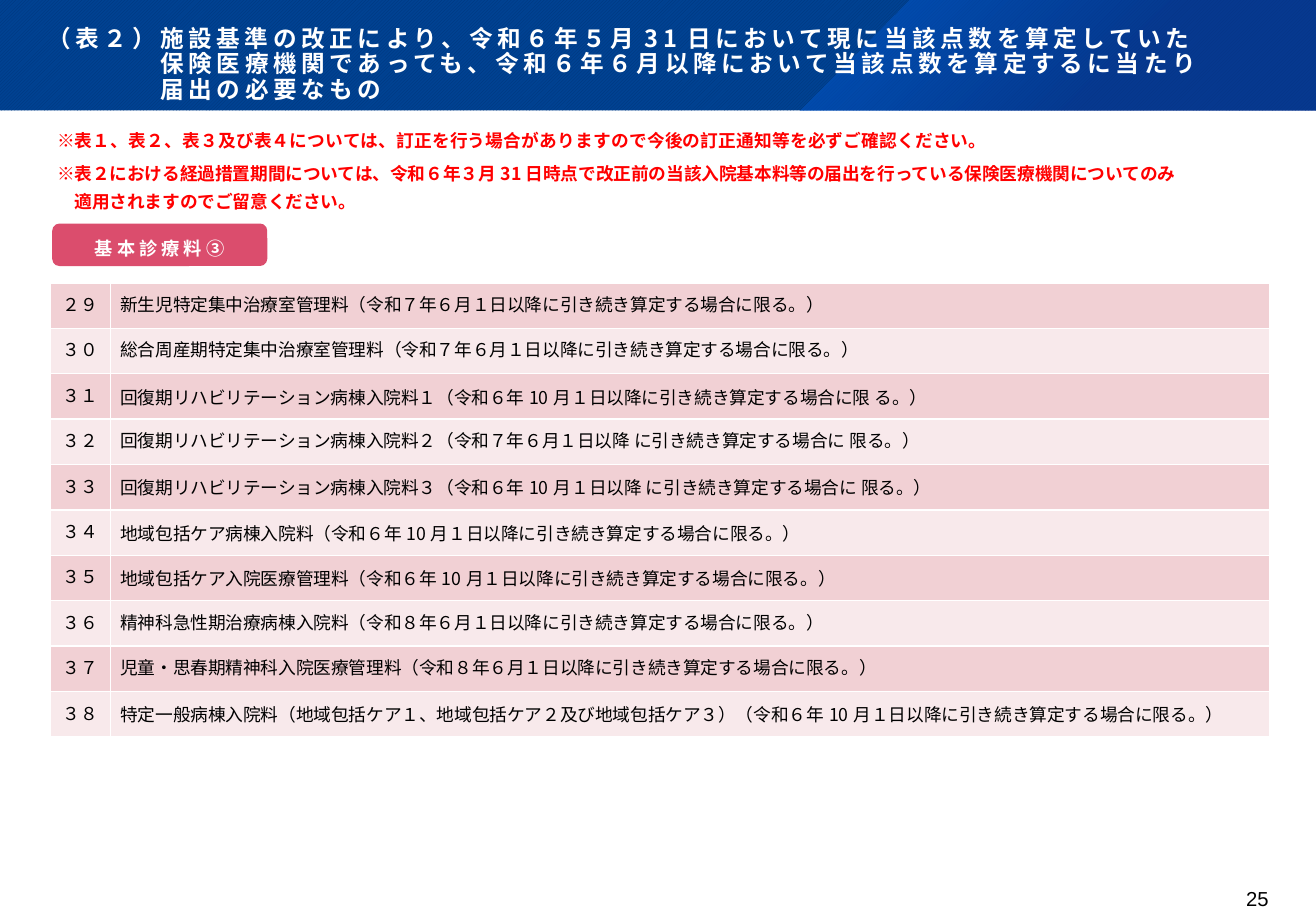
from dataclasses import dataclass
from itertools import groupby

from lxml import etree
from pptx import Presentation
from pptx import util as u
from pptx.dml.color import RGBColor
from pptx.enum import dml, shapes, text
from pptx.oxml import parse_xml
from pptx.oxml.ns import nsdecls, qn


@dataclass(frozen=True)
class Theme:
    body: str = "Karla"
    digits: str = "Noto Sans CJK JP"
    page: str = "Arial"
    white: str = "FFFFFF"
    black: str = "000000"
    red: str = "FF0000"
    pink: str = "DB4D6D"
    bands: tuple = ("F1D0D4", "F8E9EB")
    stripe: str = "003579"
    navy: str = "004292"
    glow: str = "0064DF"
    deep: str = "0C338E"
    title_pt: float = 14
    label_pt: float = 10.8
    text_pt: float = 10.5
    page_pt: float = 12


@dataclass(frozen=True)
class Style:
    size: float
    color: str
    bold: bool = False
    spacing: float = 0
    latin: str = "Noto Sans CJK JP"
    align: text.PP_ALIGN = text.PP_ALIGN.LEFT
    line: float = 1.0
    after: float = 0
    indent: float = 0
    hanging: bool = False


@dataclass(frozen=True)
class TextBlock:
    box: tuple
    insets: tuple
    style: Style
    paragraphs: tuple
    anchor: text.MSO_ANCHOR = text.MSO_ANCHOR.TOP


T = Theme()
TITLE = Style(T.title_pt, T.white, True, 2.7, line=0.9, indent=0.93, hanging=True)
NOTE = Style(T.text_pt, T.red, True, align=text.PP_ALIGN.JUSTIFY, after=4,
             indent=0.15, hanging=True)
LABEL = Style(T.label_pt, T.white, True, 2.4, align=text.PP_ALIGN.CENTER, line=1.3)
NUMBER = Style(T.text_pt, T.black, align=text.PP_ALIGN.CENTER)
ITEM = Style(T.text_pt, T.black)
PAGE = Style(T.page_pt, T.black, latin=T.page, align=text.PP_ALIGN.RIGHT)
NOTE_INSETS = (0.06, 0.03, 0.06, 0.03)

BLOCKS = (
    TextBlock((0, 0, 10.83, 0.99), (0.39, 0.36, 0.36, 0.14), TITLE, (
        "（表２）施設基準の改正により、令和６年５月31日において現に当該点数を算定していた\v"
        "保険医療機関であっても、令和６年６月以降において当該点数を算定するに当たり\v"
        "届出の必要なもの",), text.MSO_ANCHOR.BOTTOM),
    TextBlock((0.41, 1.04, 7.64, 0.24), NOTE_INSETS, NOTE, (
        "※表１、表２、表３及び表４については、訂正を行う場合がありますので"
        "今後の訂正通知等を必ずご確認ください。",)),
    TextBlock((0.41, 1.31, 9.9, 0.47), NOTE_INSETS, NOTE, (
        "※表２における経過措置期間については、令和６年３月31日時点で改正前の"
        "当該入院基本料等の届出を行っている保険医療機関についてのみ",
        "　適用されますのでご留意ください。")),
    TextBlock((9.75, 7.3, 0.69, 0.3), (0, 0, 0, 0), PAGE, ("25",)),
)

FEES = (
    ("２９", "新生児特定集中治療室管理料（令和７年６月１日以降に引き続き算定する場合に限る。）"),
    ("３０", "総合周産期特定集中治療室管理料（令和７年６月１日以降に引き続き算定する場合に限る。）"),
    ("３１", "回復期リハビリテーション病棟入院料１（令和６年10月１日以降に引き続き算定する場合に限 る。）"),
    ("３２", "回復期リハビリテーション病棟入院料２（令和７年６月１日以降 に引き続き算定する場合に 限る。）"),
    ("３３", "回復期リハビリテーション病棟入院料３（令和６年10月１日以降 に引き続き算定する場合に 限る。）"),
    ("３４", "地域包括ケア病棟入院料（令和６年10月１日以降に引き続き算定する場合に限る。）"),
    ("３５", "地域包括ケア入院医療管理料（令和６年10月１日以降に引き続き算定する場合に限る。）"),
    ("３６", "精神科急性期治療病棟入院料（令和８年６月１日以降に引き続き算定する場合に限る。）"),
    ("３７", "児童・思春期精神科入院医療管理料（令和８年６月１日以降に引き続き算定する場合に限る。）"),
    ("３８", "特定一般病棟入院料（地域包括ケア１、地域包括ケア２及び地域包括ケア３）"
             "（令和６年10月１日以降に引き続き算定する場合に限る。）"),
)


def rgb(color: str) -> RGBColor:
    return RGBColor.from_string(color)


def inches(values: tuple) -> list:
    return [u.Inches(v) for v in values]


def char_kind(ch: str) -> str:
    if ch == "\v":
        return "break"
    return "digit" if ch in "0123456789" else "body"


def write(p, content: str, style: Style) -> None:
    """Fill a paragraph, giving ASCII digits the style's Latin font."""
    p.alignment, p.line_spacing = style.align, style.line
    p.space_after = u.Pt(style.after)
    f = p.font
    f.size, f.bold, f.color.rgb = u.Pt(style.size), style.bold, rgb(style.color)
    if style.hanging and not content.startswith("　"):
        pPr = p._p.get_or_add_pPr()
        pPr.set("marL", str(u.Inches(style.indent)))
        pPr.set("indent", str(-u.Inches(style.indent)))
    for kind, chars in groupby(content, char_kind):
        if kind == "break":
            p.add_line_break()
            continue
        r = p.add_run()
        r.text = "".join(chars)
        r.font.name = style.latin if kind == "digit" else T.body
        rPr = r._r.get_or_add_rPr()
        rPr.set("spc", str(round(style.spacing * 100)))
        etree.SubElement(rPr, qn("a:ea")).set("typeface", r.font.name)


def add_block(s, block: TextBlock) -> None:
    tf = s.shapes.add_textbox(*inches(block.box)).text_frame
    tf.word_wrap, tf.vertical_anchor = True, block.anchor
    tf.margin_left, tf.margin_top, tf.margin_right, tf.margin_bottom = inches(block.insets)
    for i, content in enumerate(block.paragraphs):
        write(tf.add_paragraph() if i else tf.paragraphs[0], content, block.style)


def add_header(s) -> None:
    sp = s.shapes.add_shape(shapes.MSO_SHAPE.RECTANGLE, *inches((0, 0, 10.83, 0.91)))
    sp.shadow.inherit = False
    sp.line.fill.background()
    sp.fill.patterned()
    sp.fill.pattern = dml.MSO_PATTERN.DARK_UPWARD_DIAGONAL
    sp.fill.fore_color.rgb, sp.fill.back_color.rgb = rgb(T.stripe), rgb(T.navy)

    # Slanted translucent glow
    fb = s.shapes.build_freeform(u.Inches(7.49), u.Inches(0), scale=1.0)
    fb.add_line_segments([inches(pt) for pt in ((10.83, 0), (10.83, 0.91), (6.58, 0.91))])
    sp = fb.convert_to_shape()
    sp.shadow.inherit = False
    sp.line.fill.background()
    stops = "".join(
        f'<a:gs pos="{pos}000"><a:srgbClr val="{color}"><a:alpha val="{alpha}000"/>'
        f'</a:srgbClr></a:gs>'
        for pos, color, alpha in ((0, T.glow, 50), (62, T.deep, 55)))
    sp._element.spPr.find(qn("a:custGeom")).addnext(parse_xml(
        f'<a:gradFill {nsdecls("a")}><a:gsLst>{stops}</a:gsLst><a:path path="circle">'
        '<a:fillToRect r="100000" b="100000"/></a:path></a:gradFill>'))


def add_label(s) -> None:
    sp = s.shapes.add_shape(shapes.MSO_SHAPE.ROUNDED_RECTANGLE,
                            *inches((0.43, 1.84, 1.77, 0.35)))
    sp.adjustments[0] = 0.17
    sp.shadow.inherit = False
    sp.fill.solid()
    sp.fill.fore_color.rgb = rgb(T.pink)
    sp.line.fill.background()
    sp.text_frame.vertical_anchor = text.MSO_ANCHOR.MIDDLE
    write(sp.text_frame.paragraphs[0], "基本診療料③", LABEL)


def add_fee_table(s) -> None:
    table = s.shapes.add_table(len(FEES), 2, *inches((0.41, 2.33, 10.04, 3.74))).table
    table.columns[0].width, table.columns[1].width = inches((0.5, 9.54))
    for i, fee in enumerate(FEES):
        for cell, content, style in zip(table.rows[i].cells, fee, (NUMBER, ITEM)):
            cell.margin_left = cell.margin_right = u.Inches(0.08)
            cell.margin_top = cell.margin_bottom = 0
            cell.vertical_anchor = text.MSO_ANCHOR.MIDDLE
            write(cell.text_frame.paragraphs[0], content, style)
            tcPr = cell._tc.get_or_add_tcPr()
            for side in ("lnL", "lnR", "lnT", "lnB"):
                tcPr.append(parse_xml(
                    f'<a:{side} {nsdecls("a")} w="12700"><a:solidFill>'
                    f'<a:srgbClr val="{T.white}"/></a:solidFill></a:{side}>'))
            cell.fill.solid()
            cell.fill.fore_color.rgb = rgb(T.bands[i % 2])


def main() -> None:
    prs = Presentation()
    prs.slide_width, prs.slide_height = inches((10.83, 7.5))
    s = prs.slides.add_slide(prs.slide_layouts[6])
    add_header(s)
    add_label(s)
    add_fee_table(s)
    for block in BLOCKS:
        add_block(s, block)
    prs.save("out.pptx")


if __name__ == "__main__":
    main()
